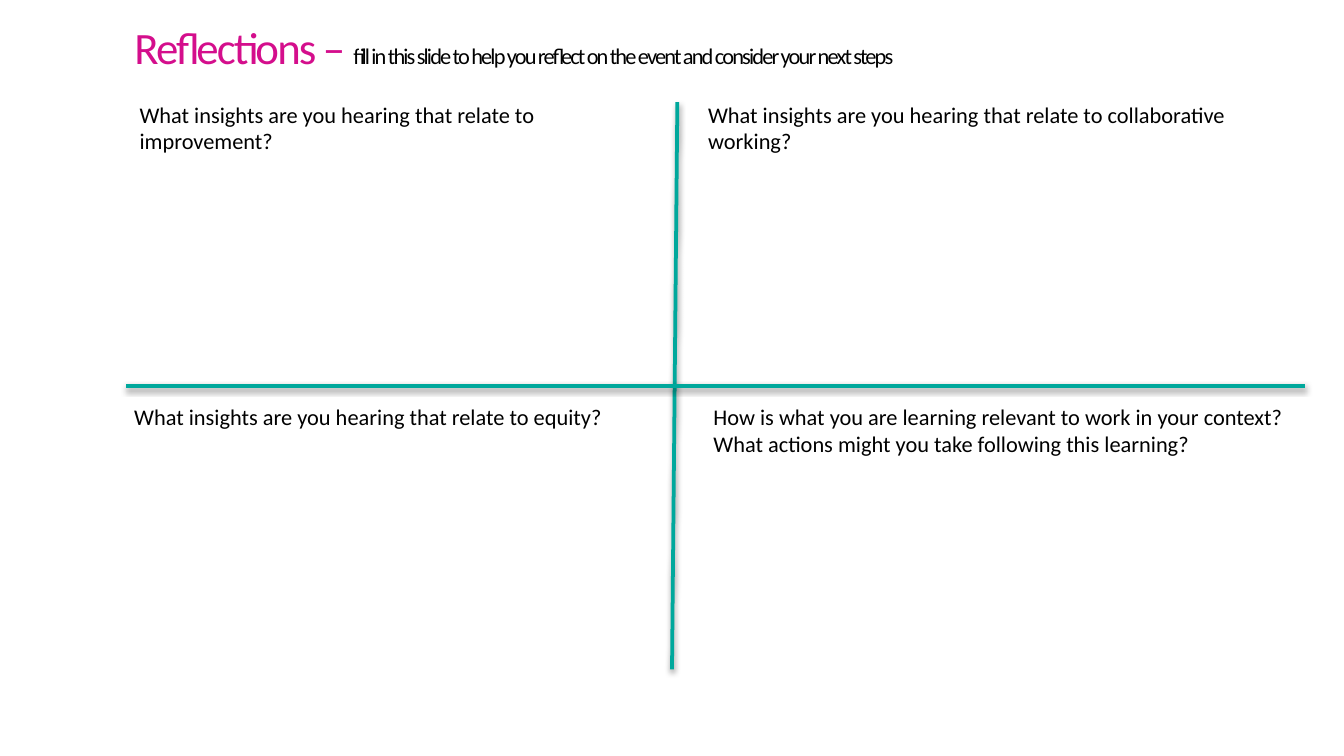
from lxml import etree
from pptx import Presentation
from pptx.dml.color import RGBColor
from pptx.enum import shapes, text
from pptx.oxml import ns
from pptx.util import Inches, Pt


def colour(value):
    return RGBColor.from_string(value)


def add_text(para, words, size=12, fill="000000", spacing=None):
    span = para.add_run()
    span.text = words
    span.font.name = "Calibri"
    span.font.size = Pt(size)
    span.font.color.rgb = colour(fill)
    if spacing is not None:
        span.font._element.set("spc", str(spacing * 100))


deck = Presentation()
deck.slide_width = Inches(10)
deck.slide_height = deck.slide_width * 9 // 16
slide = deck.slides.add_slide(deck.slide_layouts[5])

title = slide.shapes.title
title.left, title.top = Inches(0.9), Inches(0.1)
title.width, title.height = Inches(6.65), Inches(0.42)
frame = title.text_frame
frame.word_wrap = True
frame.auto_size = text.MSO_AUTO_SIZE.NONE
frame.vertical_anchor = text.MSO_ANCHOR.TOP
frame.margin_top = Inches(0.05)
heading = frame.paragraphs[0]
heading.alignment = text.PP_ALIGN.LEFT
add_text(heading, "Reflections – ", size=24, fill="D40E8C", spacing=-1)
add_text(heading, "fill in this slide to help you reflect on the event and consider your next steps", spacing=-1)

SHADOW = f"""<a:effectLst xmlns:a="{ns.nsuri('a')}">
  <a:outerShdw blurRad="{Pt(3.1)}" dist="{Pt(1.6)}" dir="5400000" rotWithShape="0">
    <a:srgbClr val="000000"><a:alpha val="38000"/></a:srgbClr>
  </a:outerShdw>
</a:effectLst>"""

dividers = [(5.04, 0.76, 5, 4.98), (0.94, 2.87, 9.71, 2.87)]
for ends in dividers:
    divider = slide.shapes.add_connector(shapes.MSO_CONNECTOR.STRAIGHT, *map(Inches, ends))
    divider.line.color.rgb = colour("00A89C")
    divider.line.width = Pt(2)
    divider._element.spPr.append(etree.fromstring(SHADOW))

questions = [
    (0.94, 0.7, 3.89, 0.5, "What insights are you hearing that relate to improvement?"),
    (5.17, 0.7, 4.45, 0.5, "What insights are you hearing that relate to collaborative working? "),
    (0.9, 2.95, 4.23, 0.3, "What insights are you hearing that relate to equity?"),
    (5.21, 2.95, 4.58, 0.5, "How is what you are learning relevant to work in your context?  "
     "What actions might you take following this learning?"),
]
for *place, question in questions:
    box = slide.shapes.add_textbox(*map(Inches, place))
    box.text_frame.word_wrap = True
    box.text_frame.auto_size = text.MSO_AUTO_SIZE.SHAPE_TO_FIT_TEXT
    add_text(box.text_frame.paragraphs[0], question)

deck.save("out.pptx")
